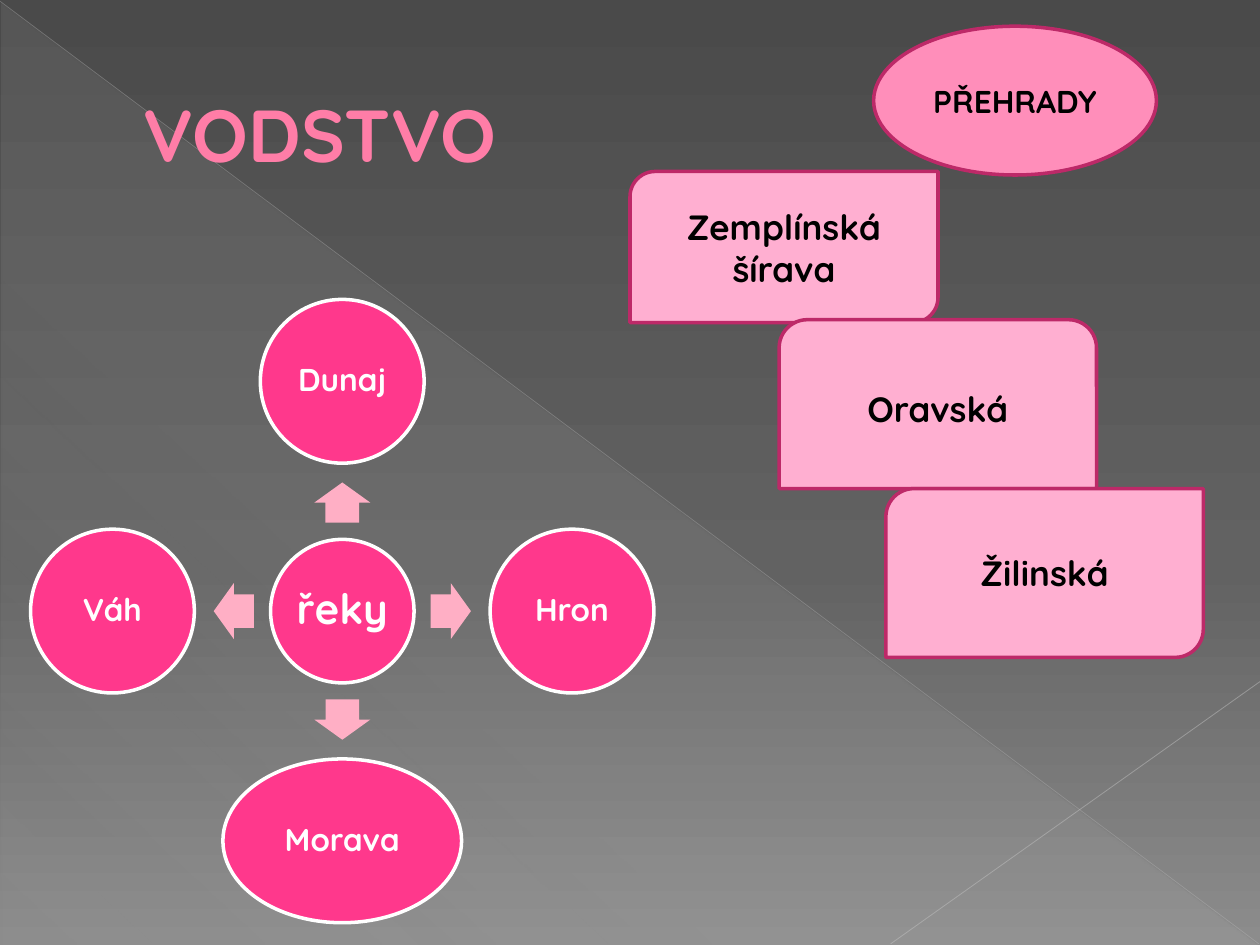
import pptx
import pptx.util
import pptx.dml.color
import pptx.enum.shapes
import pptx.enum.text
import pptx.oxml
import pptx.oxml.ns
import lxml.etree

Pt = pptx.util.Pt
SHAPES = pptx.enum.shapes.MSO_SHAPE
ALIGN = pptx.enum.text.PP_ALIGN
qn = pptx.oxml.ns.qn

FONT = "Quicksand"
COLORS = {
    "title": "FF7DA7",
    "river": "FF388C",
    "arrow": "FFAFC5",
    "dam": "FFAFD1",
    "dam_heading": "FF8EBA",
    "dam_line": "BD2968",
    "white": "FFFFFF",
    "black": "000000",
    "triangle": "D2D2D2",
    "long_line": "BFBFBF",
    "short_line": "C6C6C6",
    "top": "4A4A4A",
    "middle": "626262",
    "bottom": "8C8C8C",
}
HUB_X, HUB_Y = 195.6, 349.2
RIVER_DISTANCE, ARROW_DISTANCE = 131.3, 62


def rgb(name):
    return pptx.dml.color.RGBColor.from_string(COLORS[name])


def gradient(stops, angle):
    stop_xml = "".join(
        f'<a:gs pos="{position * 1000}"><a:srgbClr val="{COLORS[name]}">'
        f'<a:alpha val="{alpha * 1000}"/></a:srgbClr></a:gs>'
        for position, name, alpha in stops
    )
    return pptx.oxml.parse_xml(
        f'<a:gradFill {pptx.oxml.ns.nsdecls("a")} rotWithShape="1">'
        f'<a:gsLst>{stop_xml}</a:gsLst>'
        f'<a:lin ang="{angle * 60000}" scaled="0"/></a:gradFill>'
    )


def replace_solid_fill(parent, fill):
    parent.replace(parent.find(qn("a:solidFill")), fill)


def set_background(slide):
    slide.background.fill.solid()
    properties = slide.element.find(".//" + qn("p:bgPr"))
    stops = [(0, "top", 100), (60, "middle", 100), (100, "bottom", 100)]
    replace_solid_fill(properties, gradient(stops, 90))


def write_text(shape, text, size, color, align=ALIGN.CENTER):
    text_frame = shape.text_frame
    text_frame.word_wrap = True
    text_frame.vertical_anchor = pptx.enum.text.MSO_ANCHOR.MIDDLE
    text_frame.text = text
    paragraph = text_frame.paragraphs[0]
    paragraph.alignment = align
    font = paragraph.runs[0].font
    font.name = FONT
    font.size = Pt(size)
    font.bold = True
    font.color.rgb = rgb(color)


def add_shape(slide, kind, left, top, width, height, fill, line=None):
    shape = slide.shapes.add_shape(kind, Pt(left), Pt(top), Pt(width), Pt(height))
    shape.shadow.inherit = False
    shape.fill.solid()
    shape.fill.fore_color.rgb = rgb(fill)
    if line:
        shape.line.color.rgb = rgb(line)
        shape.line.width = Pt(2)
    else:
        shape.line.fill.background()
    return shape


def add_line(slide, start, end, color, width, alpha):
    connector = slide.shapes.add_connector(
        pptx.enum.shapes.MSO_CONNECTOR.STRAIGHT,
        *(Pt(value) for value in start + end),
    )
    connector.line.color.rgb = rgb(color)
    connector.line.width = Pt(width)
    properties = connector.element.spPr
    color_element = properties.find(".//" + qn("a:srgbClr"))
    lxml.etree.SubElement(color_element, qn("a:alpha"), val=str(alpha * 1000))
    lxml.etree.SubElement(properties, qn("a:effectLst"))


def add_decoration(slide):
    triangle = add_shape(
        slide, SHAPES.RIGHT_TRIANGLE, 0.7, 1.4, 718.6, 538.6, "triangle"
    )
    stops = [(0, "triangle", 10), (70, "triangle", 8), (100, "triangle", 1)]
    replace_solid_fill(triangle.element.spPr, gradient(stops, 133))
    add_line(slide, (0, 0.7), (719.3, 539.3), "long_line", 0.39, 35)
    add_line(slide, (720, 389.5), (509, 539.3), "short_line", 0.47, 45)


def add_title(slide, text):
    title = slide.shapes.add_textbox(Pt(36.7), Pt(20.9), Pt(648), Pt(110.2))
    write_text(title, text, 42, "title", ALIGN.LEFT)
    title.text_frame.margin_left = Pt(45.4)


def add_river(slide, text, center_x, center_y, width, height, size):
    river = add_shape(
        slide, SHAPES.OVAL, center_x - width / 2, center_y - height / 2,
        width, height, "river", "white",
    )
    write_text(river, text, size, "white")
    text_frame = river.text_frame
    text_frame.margin_left = text_frame.margin_right = Pt(2)
    text_frame.margin_top = text_frame.margin_bottom = Pt(2)
    text_frame.paragraphs[0].line_spacing = 0.9


def add_arrow(slide, center_x, center_y, rotation):
    width, height = 23, 32
    arrow = add_shape(
        slide, SHAPES.RIGHT_ARROW, center_x - width / 2, center_y - height / 2,
        width, height, "arrow",
    )
    arrow.adjustments[0] = 0.6
    arrow.adjustments[1] = 0.5
    arrow.rotation = rotation


def add_rivers(slide):
    add_river(slide, "řeky", HUB_X, HUB_Y, 82, 82, 24)
    branches = [
        ("Dunaj", 0, -1, 270, 93.6),
        ("Hron", 1, 0, 0, 93.6),
        ("Morava", 0, 1, 90, 136.4),
        ("Váh", -1, 0, 180, 93.6),
    ]
    for text, step_x, step_y, rotation, width in branches:
        add_arrow(
            slide, HUB_X + step_x * ARROW_DISTANCE,
            HUB_Y + step_y * ARROW_DISTANCE, rotation,
        )
        add_river(
            slide, text, HUB_X + step_x * RIVER_DISTANCE,
            HUB_Y + step_y * RIVER_DISTANCE, width, 93.6, 18,
        )


def add_dams(slide):
    diagonal = SHAPES.ROUND_2_DIAG_RECTANGLE
    same_side = SHAPES.ROUND_2_SAME_RECTANGLE
    dams = [
        ("Zemplínská šírava", diagonal, (360, 98, 176, 86.4), "dam", 20),
        ("Oravská", same_side, (445.2, 182.7, 181.4, 96.5), "dam", 20),
        ("PŘEHRADY", SHAPES.OVAL, (499.2, 15, 161.6, 85), "dam_heading", 18),
        ("Žilinská", diagonal, (506.2, 279.2, 181.4, 96.5), "dam", 20),
    ]
    for text, kind, box, fill, size in dams:
        dam = add_shape(slide, kind, *box, fill, "dam_line")
        write_text(dam, text, size, "black")


def main():
    presentation = pptx.Presentation()
    presentation.slide_width = Pt(720)
    presentation.slide_height = Pt(540)
    slide = presentation.slides.add_slide(presentation.slide_layouts[6])
    set_background(slide)
    add_decoration(slide)
    add_title(slide, "VODSTVO")
    add_rivers(slide)
    add_dams(slide)
    presentation.save("out.pptx")


if __name__ == "__main__":
    main()
